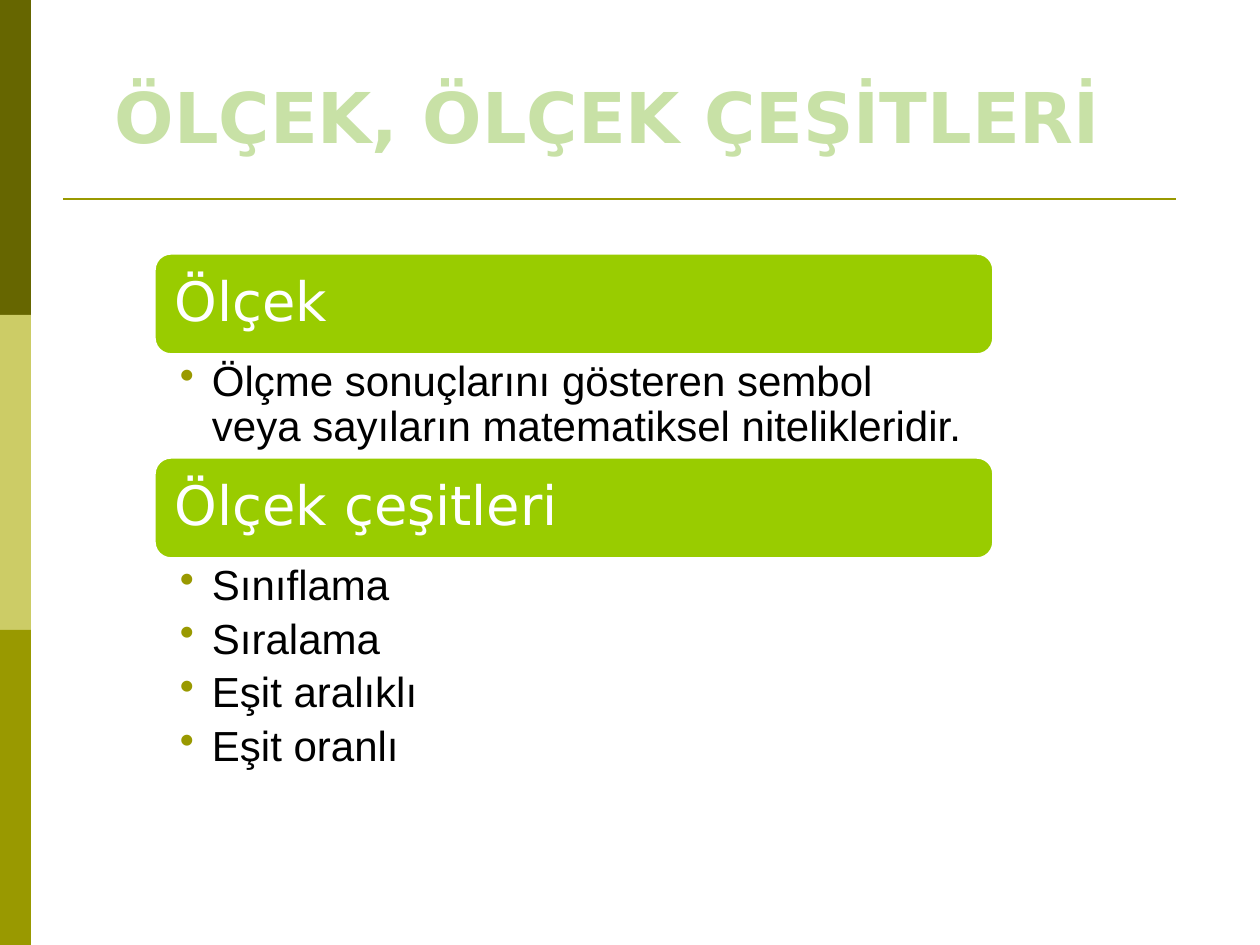
from lxml import etree
from pptx import Presentation
from pptx.dml.color import RGBColor
from pptx.enum.shapes import MSO_CONNECTOR as Link, MSO_SHAPE as Form
from pptx.enum.text import MSO_ANCHOR as Anchor, PP_ALIGN as Align
from pptx.oxml.ns import qn
from pptx.util import Emu, Pt

WIDE, HIGH = 1260, 945
SIDE = ["666600", "CCCC66", "999900"]
OLIVE, GREEN, WHITE = "999900", "99CC00", "FFFFFF"
LEFT, SPAN, ROW = 154, 840, 102
TOPICS = [
    ("Ölçek", ROW, [
        "Ölçme sonuçlarını gösteren sembol veya sayıların matematiksel nitelikleridir."]),
    ("Ölçek çeşitleri", 217, [
        "Sınıflama", "Sıralama", "Eşit aralıklı", "Eşit oranlı"]),
]


def px(n):
    return Emu(round(n * 914400 / 126))


def tint(code):
    return RGBColor.from_string(code)


class Deck:
    """Holds the fonts and the current slide."""
    head, body = "DejaVu Sans", "Arial"

    def __init__(self):
        self.prs = Presentation()
        self.prs.slide_width, self.prs.slide_height = px(WIDE), px(HIGH)
        self.slide = self.prs.slides.add_slide(self.prs.slide_layouts[6])

    def block(self, form, box, fill, edge=None):
        shape = self.slide.shapes.add_shape(form, *map(px, box))
        shape.shadow.inherit = False
        shape.fill.solid()
        shape.fill.fore_color.rgb = tint(fill)
        if edge:
            shape.line.color.rgb = tint(edge)
            shape.line.width = Pt(2)
        else:
            shape.line.fill.background()
        return shape

    def rule(self, x1, x2, y):
        line = self.slide.shapes.add_connector(Link.STRAIGHT, px(x1), px(y), px(x2), px(y))
        line.line.color.rgb = tint(OLIVE)
        line.line.width = Pt(1.5)
        etree.SubElement(line._element.spPr, qn("a:effectLst"))

    def frame(self, box, pads=None):
        text = self.slide.shapes.add_textbox(*map(px, box)).text_frame
        text.word_wrap = True
        if pads:
            self.inset(text, *pads)
        return text

    def inset(self, text, left, top, right, bottom):
        text.margin_left, text.margin_top = px(left), px(top)
        text.margin_right, text.margin_bottom = px(right), px(bottom)

    def style(self, para, face, size, color, bold=False):
        for run in para.runs:
            font = run.font
            font.name, font.size, font.bold = face, Pt(size), bold
            font.color.rgb = tint(color)

    def title(self, words, box):
        text = self.frame(box)
        text.text = words
        para = text.paragraphs[0]
        para.alignment = Align.CENTER
        self.style(para, self.head, 40, "C8E1A6", True)

    def banner(self, words, box):
        text = self.block(Form.ROUNDED_RECTANGLE, box, GREEN, WHITE).text_frame
        text.word_wrap = True
        text.vertical_anchor = Anchor.MIDDLE
        self.inset(text, 16, 16, 16, 16)
        text.text = words
        para = text.paragraphs[0]
        para.alignment = Align.LEFT
        para.line_spacing = 0.9
        self.style(para, self.head, 31, WHITE)

    def points(self, items, box):
        text = self.frame(box, (26, 5, 30, 5))
        text.text = "\n".join(items)
        for para in text.paragraphs:
            para.level = 1
            para.line_spacing = 0.9
            para.space_after = Pt(4.8)
            self.style(para, self.body, 24, "000000")
            self.bullet(para)

    def bullet(self, para):
        props = para._p.get_or_add_pPr()
        props.set("marL", str(px(32)))
        props.set("indent", str(-px(32)))
        color = etree.SubElement(props, qn("a:buClr"))
        etree.SubElement(color, qn("a:srgbClr"), val=OLIVE)
        etree.SubElement(props, qn("a:buChar"), char="•")


def main():
    deck = Deck()
    part = HIGH // len(SIDE)
    for i, color in enumerate(SIDE):
        deck.block(Form.RECTANGLE, (0, i * part, 31, part), color)
    deck.rule(63, 1176, 199)
    deck.title("ÖLÇEK, ÖLÇEK ÇEŞİTLERİ", (84, 67, 1047, 97))

    top = 253
    for name, tall, items in TOPICS:
        deck.banner(name, (LEFT, top, SPAN, ROW))
        deck.points(items, (LEFT, top + ROW, SPAN, tall))
        top += ROW + tall
    deck.prs.save("out.pptx")


if __name__ == "__main__":
    main()
